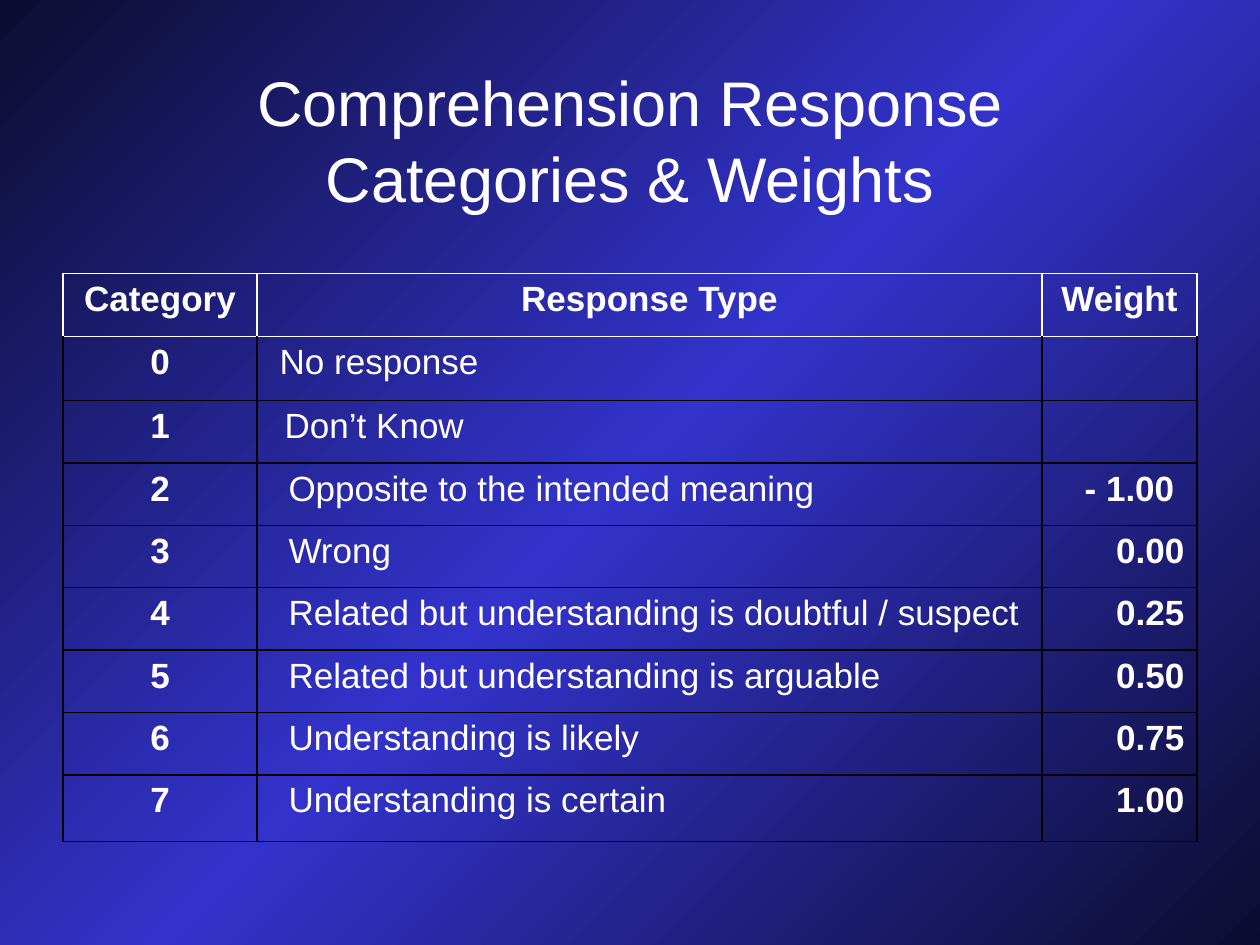
from copy import deepcopy

from lxml import etree
from pptx import Presentation
from pptx.dml.color import RGBColor
from pptx.enum.text import MSO_ANCHOR, PP_ALIGN
from pptx.oxml.ns import qn
from pptx.util import Inches, Pt

LEFT, CENTER, RIGHT = PP_ALIGN.LEFT, PP_ALIGN.CENTER, PP_ALIGN.RIGHT
MIDDLE = MSO_ANCHOR.MIDDLE

COLORS = {"text": "FFFFFF", "header": "FFFFFF", "grid": "000000",
          "edge": "0C0C30", "glow": "3333CC"}
FONT = "Arial"

TITLE = "Comprehension Response Categories & Weights"
HEADER = ("Category", "Response Type", "Weight")
RESPONSES = [
    ("No response", ""),
    ("Don’t Know", ""),
    ("Opposite to the intended meaning", "- 1.00"),
    ("Wrong", "0.00"),
    ("Related but understanding is doubtful / suspect", "0.25"),
    ("Related but understanding is arguable", "0.50"),
    ("Understanding is likely", "0.75"),
    ("Understanding is certain", "1.00"),
]
COL_WIDTHS = (1.54, 6.23, 1.23)
ROW_HEIGHTS = (0.5, 0.51) + (0.495,) * 6 + (0.53,)
MARGIN = 0.1
INDENTS = {0: 0.08, 1: 0.12}    # response text, by category
INDENT = 0.15                   # all other categories
NEGATIVE_INSET = 0.08


def style(p, size, align, bold=False):
    p.alignment = align
    for r in p.runs:
        r.font.name, r.font.size, r.font.bold = FONT, Pt(size), bold
        r.font.color.rgb = RGBColor.from_string(COLORS["text"])


def set_borders(cell, colors):
    """Draw 1 pt borders; colors run left, right, top, bottom."""
    tcPr = cell._tc.get_or_add_tcPr()
    for i, (side, color) in enumerate(zip("LRTB", colors)):
        ln = etree.Element(qn("a:ln" + side), w=str(Pt(1)))
        fill = etree.SubElement(ln, qn("a:solidFill"))
        etree.SubElement(fill, qn("a:srgbClr"), val=color)
        tcPr.insert(i, ln)


prs = Presentation()
prs.slide_width, prs.slide_height = Inches(10), Inches(7.5)
s = prs.slides.add_slide(prs.slide_layouts[6])

# Background: dark corners with a bright diagonal
fill = s.background.fill
fill.gradient()
fill.gradient_angle = 315
first_stop = fill.gradient_stops[0]._gs
first_stop.addnext(deepcopy(first_stop))
for stop, (pos, name) in zip(fill.gradient_stops,
                             ((0, "edge"), (0.5, "glow"), (1, "edge"))):
    stop.position = pos
    stop.color.rgb = RGBColor.from_string(COLORS[name])

# Table
rows = [HEADER] + [(str(i), *row) for i, row in enumerate(RESPONSES)]
table = s.shapes.add_table(len(rows), len(HEADER), Inches(0.5), Inches(2.17),
                           Inches(sum(COL_WIDTHS)), Inches(sum(ROW_HEIGHTS))).table
table.first_row = table.horz_banding = False
for column, width in zip(table.columns, COL_WIDTHS):
    column.width = Inches(width)
for row, height in zip(table.rows, ROW_HEIGHTS):
    row.height = Inches(height)

for i, values in enumerate(rows):
    line = COLORS["header" if i == 0 else "grid"]
    top = COLORS["header" if i <= 1 else "grid"]
    for j, value in enumerate(values):
        cell = table.cell(i, j)
        cell.fill.background()
        set_borders(cell, (line, line, top, line))
        cell.text = value
        align = CENTER if i == 0 else (CENTER, LEFT, RIGHT)[j]
        style(cell.text_frame.paragraphs[0], 20, align, bold=i == 0 or j != 1)
        if align == LEFT:
            cell.margin_left = Inches(MARGIN + INDENTS.get(i - 1, INDENT))
        elif value.startswith("-"):
            cell.margin_right = Inches(MARGIN + NEGATIVE_INSET)

# Title
tf = s.shapes.add_textbox(Inches(0.75), Inches(0.48),
                          Inches(8.5), Inches(1.25)).text_frame
tf.word_wrap, tf.vertical_anchor = True, MIDDLE
tf.text = TITLE
style(tf.paragraphs[0], 36, CENTER)

prs.save("out.pptx")
